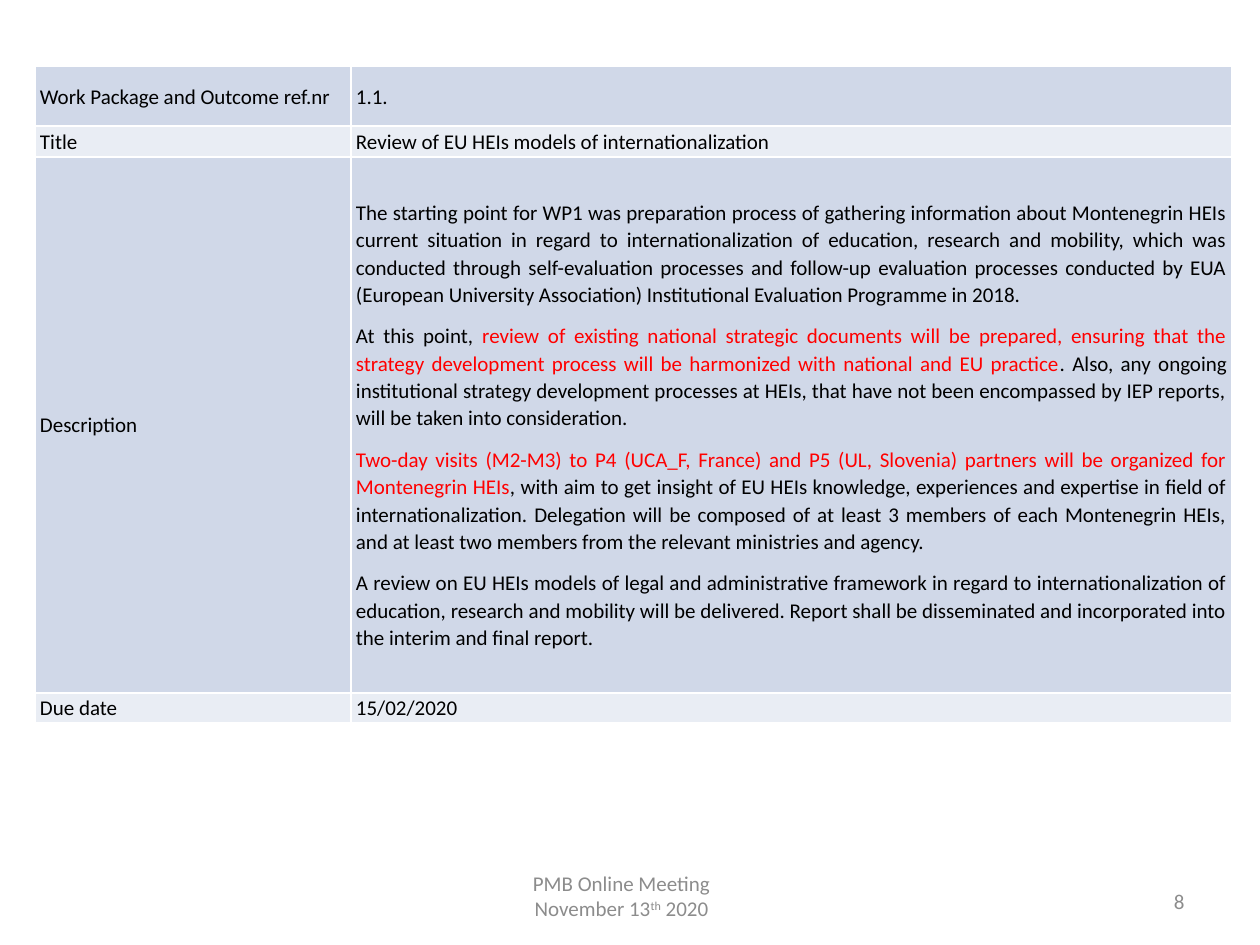
from dataclasses import dataclass

from lxml import etree
from pptx import Presentation
from pptx import util as u
from pptx.dml.color import RGBColor
from pptx.enum import text
from pptx.oxml.ns import qn

PX_PER_INCH = 126
COLORS = {
    "ink": "000000",
    "accent": "FF0000",
    "muted": "8C8C8C",
    "band_dark": "D0D8E8",
    "band_light": "E9EDF4",
    "border": "FFFFFF",
}
FONT = {"name": "Calibri", "size": u.Pt(12)}
CELL_PARA = {"line_spacing": 1.07, "space_after": u.Pt(8)}
LEFT, CENTER, RIGHT, JUSTIFY = (
    text.PP_ALIGN.LEFT, text.PP_ALIGN.CENTER, text.PP_ALIGN.RIGHT, text.PP_ALIGN.JUSTIFY)


@dataclass(frozen=True)
class Span:
    words: str
    color: str = "ink"
    baseline: int = 0


@dataclass(frozen=True)
class Row:
    height: int
    label: str
    paras: list[list[Span]]
    align: text.PP_ALIGN = LEFT


@dataclass(frozen=True)
class Box:
    left: int
    top: int
    width: int
    height: int
    paras: list[list[Span]]
    align: text.PP_ALIGN


def px(length: int) -> u.Emu:
    return u.Emu(round(length * u.Inches(1) / PX_PER_INCH))


def rgb(name: str) -> RGBColor:
    return RGBColor.from_string(COLORS[name])


def apply(target, values: dict) -> None:
    for name, value in values.items():
        setattr(target, name, value)


def write(frame, paras: list[list[Span]], align: text.PP_ALIGN, para_format: dict) -> None:
    for index, spans in enumerate(paras):
        para = frame.add_paragraph() if index else frame.paragraphs[0]
        apply(para, {"alignment": align, **para_format})
        for item in spans:
            span = para.add_run()
            span.text = item.words
            apply(span.font, FONT)
            span.font.color.rgb = rgb(item.color)
            if item.baseline:
                span.font._element.set("baseline", str(item.baseline * 1000))


def add_borders(cell) -> None:
    properties = cell._tc.get_or_add_tcPr()
    for index, side in enumerate(("lnL", "lnR", "lnT", "lnB")):
        line = etree.Element(qn(f"a:{side}"), w=str(u.Pt(1)))
        fill = etree.SubElement(line, qn("a:solidFill"))
        etree.SubElement(fill, qn("a:srgbClr"), val=COLORS["border"])
        properties.insert(index, line)


def add_outcome_table(page, left: int, top: int, widths: list[int], rows: list[Row]) -> None:
    height = sum(row.height for row in rows)
    table = page.shapes.add_table(
        len(rows), len(widths), px(left), px(top), px(sum(widths)), px(height)).table
    apply(table, {"first_row": False, "horz_banding": False})
    for column, width in zip(table.columns, widths):
        column.width = px(width)
    cell_format = {
        "margin_left": px(5), "margin_right": px(5), "margin_top": 0, "margin_bottom": 0,
        "vertical_anchor": text.MSO_ANCHOR.MIDDLE,
    }
    for index, row in enumerate(rows):
        table.rows[index].height = px(row.height)
        contents = (([[Span(row.label)]], LEFT), (row.paras, row.align))
        for column, (paras, align) in enumerate(contents):
            cell = table.cell(index, column)
            apply(cell, cell_format)
            cell.fill.solid()
            cell.fill.fore_color.rgb = rgb("band_light" if index % 2 else "band_dark")
            add_borders(cell)
            write(cell.text_frame, paras, align, CELL_PARA)


def add_text_box(page, box: Box) -> None:
    frame = page.shapes.add_textbox(
        px(box.left), px(box.top), px(box.width), px(box.height)).text_frame
    apply(frame, {"word_wrap": True, "vertical_anchor": text.MSO_ANCHOR.MIDDLE})
    write(frame, box.paras, box.align, {})


DESCRIPTION = [
    [Span("The starting point for WP1 was preparation process of gathering information about "
          "Montenegrin HEIs current situation in regard to internationalization of education, "
          "research and mobility, which was conducted through self-evaluation processes and "
          "follow-up evaluation processes conducted by EUA (European University Association) "
          "Institutional Evaluation Programme in 2018. ")],
    [Span("At this point, "),
     Span("review of existing national strategic documents will be prepared, ensuring that the "
          "strategy development process will be harmonized with national and EU practice",
          "accent"),
     Span(". Also, any ongoing institutional strategy development processes at HEIs, that have "
          "not been encompassed by IEP reports, will be taken into consideration.")],
    [Span("Two-day visits (M2-M3) to P4 (UCA_F, France) and P5 (UL, Slovenia) partners will be "
          "organized for Montenegrin HEIs", "accent"),
     Span(", with aim to get insight of EU HEIs knowledge, experiences and expertise in field "
          "of internationalization. Delegation will be composed of at least 3 members of each "
          "Montenegrin HEIs, and at least two members from the relevant ministries and agency.")],
    [Span("A review on EU HEIs models of legal and administrative framework in regard to "
          "internationalization of education, research and mobility will be delivered. Report "
          "shall be disseminated and incorporated into the interim and final report.")],
]
ROWS = [
    Row(60, "Work Package and Outcome ref.nr", [[Span("1.1.")]]),
    Row(31, "Title", [[Span("Review of EU HEIs models of internationalization")]]),
    Row(536, "Description", DESCRIPTION, JUSTIFY),
    Row(30, "Due date", [[Span("15/02/2020")]]),
]
PAGE_NUMBER = Box(903, 876, 294, 50, [[Span("8", "muted")]], RIGHT)
FOOTER = Box(273, 872, 697, 47, [
    [Span("PMB Online Meeting", "muted")],
    [Span("November 13", "muted"), Span("th", "muted", 30), Span(" 2020", "muted")],
], CENTER)


def main() -> None:
    deck = Presentation()
    apply(deck, {"slide_width": px(1260), "slide_height": px(945)})
    page = deck.slides.add_slide(deck.slide_layouts[6])

    # Page number
    add_text_box(page, PAGE_NUMBER)
    # Work package outcome
    add_outcome_table(page, 35, 66, [316, 881], ROWS)
    # Meeting footer
    add_text_box(page, FOOTER)

    deck.save("out.pptx")


if __name__ == "__main__":
    main()
